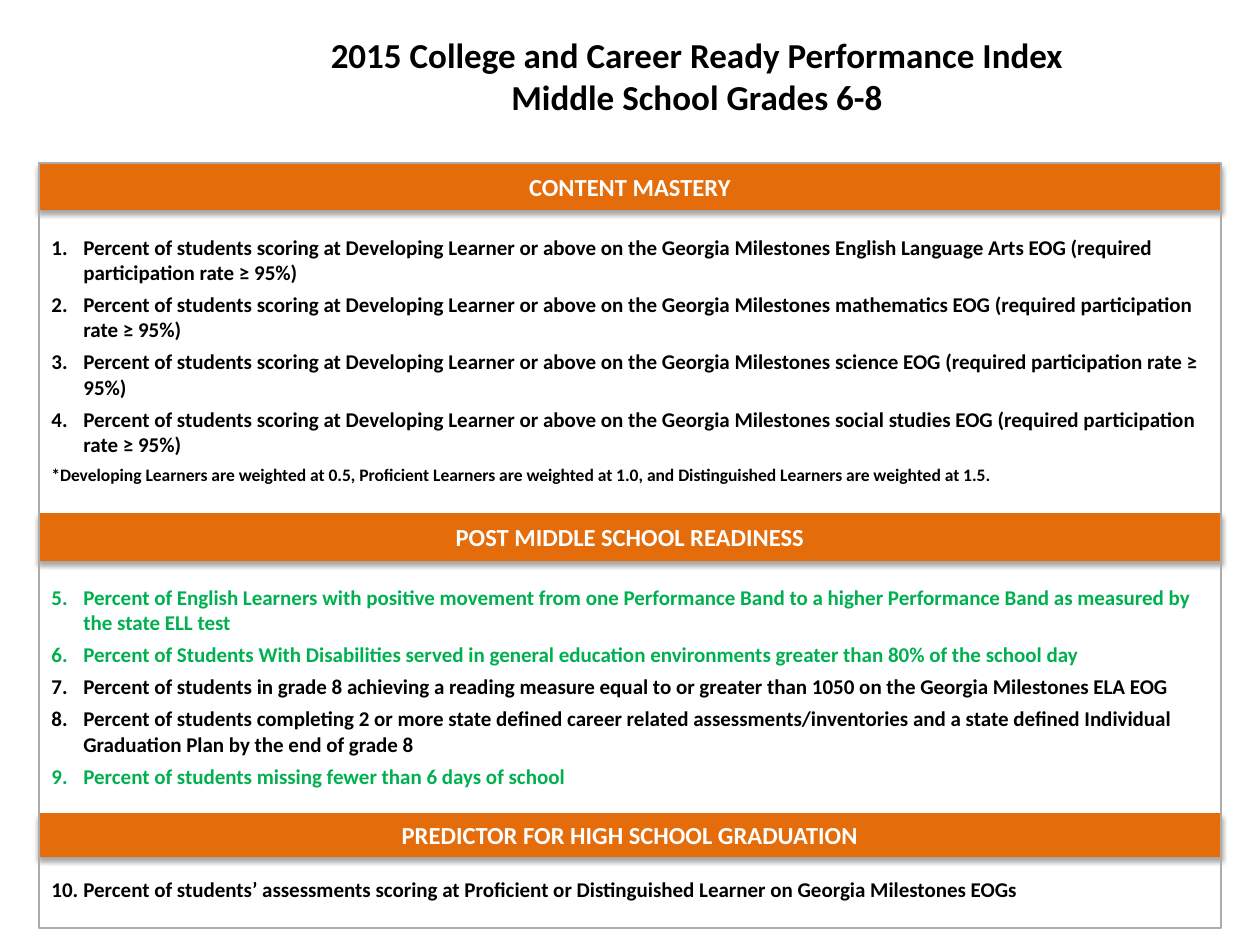
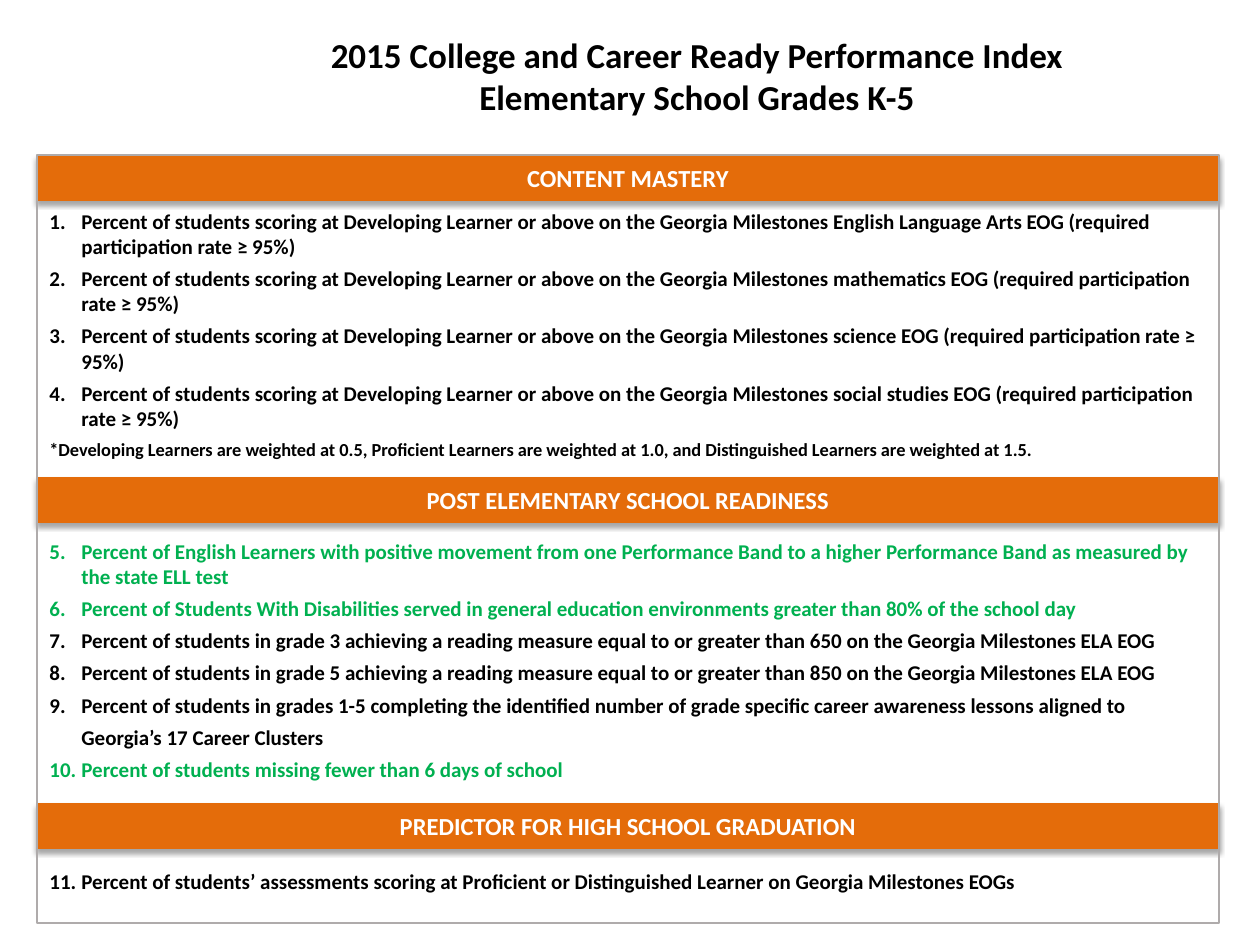
from pptx import Presentation
from pptx.dml.color import RGBColor
from pptx.enum.shapes import MSO_SHAPE
from pptx.enum.text import MSO_ANCHOR, PP_ALIGN
from pptx.oxml.ns import qn
from pptx.util import Pt
from lxml import etree

RECT = MSO_SHAPE.RECTANGLE
MIDDLE = MSO_ANCHOR.MIDDLE
CENTER = PP_ALIGN.CENTER

BLACK = RGBColor(0x00, 0x00, 0x00)
WHITE = RGBColor(0xFF, 0xFF, 0xFF)
ORANGE = RGBColor(0xE4, 0x6C, 0x0A)
GREEN = RGBColor(0x00, 0xB0, 0x50)
GRAY = RGBColor(0xAF, 0xAB, 0xAB)

FONT = "Calibri"
EMU_PER_PX = 914400 / 126
PAGE_SIZE = (1260, 945)
TITLE_BOX = (272, 19, 850, 113)
BAND_WIDTH = 1182
LIST_WIDTH = 1190
NUMBER_INDENT = 32

# Kinds of list entries
PLAIN, MARKED, CONTINUED, NOTE = range(4)

TITLE = "2015 College and Career Ready Performance Index"
MASTERY = [
    (PLAIN, "Percent of students scoring at Developing Learner or above on the "
            f"Georgia Milestones {subject} EOG (required participation rate ≥ 95%)")
    for subject in ("English Language Arts", "mathematics", "science", "social studies")
] + [
    (NOTE, "*Developing Learners are weighted at 0.5, Proficient Learners are weighted "
           "at 1.0, and Distinguished Learners are weighted at 1.5."),
]
SHARED_READINESS = [
    (MARKED, "Percent of English Learners with positive movement from one Performance Band "
             "to a higher Performance Band as measured by the state ELL test"),
    (MARKED, "Percent of Students With Disabilities served in general education "
             "environments greater than 80% of the school day"),
]
ATTENDANCE = (MARKED, "Percent of students missing fewer than 6 days of school")
PREDICTOR = [
    (PLAIN, "Percent of students’ assessments scoring at Proficient or Distinguished "
            "Learner on Georgia Milestones EOGs"),
]


def reading_goal(grade, score):
    return (PLAIN, f"Percent of students in grade {grade} achieving a reading measure equal to "
                   f"or greater than {score} on the Georgia Milestones ELA EOG")


# Sections: heading, band top, band height, list top, list height, entries
SCHOOLS = [
    {
        "level": "Middle School Grades 6-8",
        "left": 39, "frame_top": 163, "frame_height": 765, "note_size": 10,
        "sections": [
            ("CONTENT MASTERY", 164, 45, 228, 299, MASTERY),
            ("POST MIDDLE SCHOOL READINESS", 514, 46, 578, 219, SHARED_READINESS + [
                reading_goal(8, 1050),
                (PLAIN, "Percent of students completing 2 or more state defined career related "
                        "assessments/inventories and a state defined Individual Graduation "
                        "Plan by the end of grade 8"),
                ATTENDANCE,
            ]),
            ("PREDICTOR FOR HIGH SCHOOL GRADUATION", 814, 42, 870, 38, PREDICTOR),
        ],
    },
    {
        "level": "Elementary School Grades K-5",
        "left": 37, "frame_top": 155, "frame_height": 768, "note_size": 10.5,
        "sections": [
            ("CONTENT MASTERY", 156, 44, 202, 268, MASTERY),
            ("POST ELEMENTARY SCHOOL READINESS", 478, 44, 532, 258, SHARED_READINESS + [
                reading_goal(3, 650),
                reading_goal(5, 850),
                (PLAIN, "Percent of students in grades 1-5 completing the identified number of "
                        "grade specific career awareness lessons aligned to"),
                (CONTINUED, "Georgia’s 17 Career Clusters"),
                ATTENDANCE,
            ]),
            ("PREDICTOR FOR HIGH SCHOOL GRADUATION", 804, 44, 862, 38, PREDICTOR),
        ],
    },
]


def px(length):
    return round(length * EMU_PER_PX)


def place(box):
    return [px(length) for length in box]


def style(paragraph, size, color):
    font = paragraph.font
    font.name, font.size, font.bold = FONT, Pt(size), True
    font.color.rgb = color


def fill_centered(frame, text, size, color):
    frame.word_wrap = True
    frame.vertical_anchor = MIDDLE
    frame.text = text
    for paragraph in frame.paragraphs:
        paragraph.alignment = CENTER
        style(paragraph, size, color)


def add_title(slide, level):
    title = slide.shapes.add_textbox(*place(TITLE_BOX))
    fill_centered(title.text_frame, f"{TITLE}\n{level}", 20, BLACK)


def add_shadow(shape):
    """Add a soft shadow straight below the shape."""
    effects = shape._element.spPr.find(qn("a:effectLst"))
    shadow = etree.SubElement(effects, qn("a:outerShdw"), blurRad=str(Pt(3.1)),
                              dist=str(Pt(1.8)), dir="5400000", rotWithShape="0")
    color = etree.SubElement(shadow, qn("a:srgbClr"), val=str(BLACK))
    etree.SubElement(color, qn("a:alpha"), val="35000")


def add_band(slide, box, heading):
    band = slide.shapes.add_shape(RECT, *place(box))
    band.shadow.inherit = False
    add_shadow(band)
    band.fill.solid()
    band.fill.fore_color.rgb = ORANGE
    band.line.color.rgb = ORANGE
    band.line.width = Pt(0.75)
    fill_centered(band.text_frame, heading, 14, WHITE)


def add_frame(slide, box):
    frame = slide.shapes.add_shape(RECT, *place(box))
    frame.shadow.inherit = False
    frame.fill.background()
    frame.line.color.rgb = GRAY
    frame.line.width = Pt(1)


def add_list(slide, box, entries, number, note_size):
    """Add the entries, numbered from number, and return the next free number."""
    frame = slide.shapes.add_textbox(*place(box)).text_frame
    frame.word_wrap = True
    frame.text = "\n".join(text for _, text in entries)
    start = number
    for paragraph, (kind, _) in zip(frame.paragraphs, entries):
        paragraph.space_after = Pt(4)
        properties = paragraph._p.get_or_add_pPr()
        if kind != NOTE:
            properties.set("marL", str(px(NUMBER_INDENT)))
        if kind in (PLAIN, MARKED):
            properties.set("indent", str(-px(NUMBER_INDENT)))
            etree.SubElement(properties, qn("a:buFont"), typeface="+mj-lt")
            etree.SubElement(properties, qn("a:buAutoNum"), type="arabicPeriod",
                             startAt=str(start))
            number += 1
        else:
            start = number
        style(paragraph, note_size if kind == NOTE else 12,
              GREEN if kind == MARKED else BLACK)
    return number


def add_school(deck, school):
    slide = deck.slides.add_slide(deck.slide_layouts[6])
    left = school["left"]
    add_title(slide, school["level"])
    for heading, top, height, *_ in school["sections"]:
        add_band(slide, (left, top, BAND_WIDTH, height), heading)
    add_frame(slide, (left, school["frame_top"], BAND_WIDTH, school["frame_height"]))
    number = 1
    for *_, top, height, entries in school["sections"]:
        number = add_list(slide, (left, top, LIST_WIDTH, height), entries, number,
                          school["note_size"])


def main():
    deck = Presentation()
    deck.slide_width, deck.slide_height = place(PAGE_SIZE)
    for school in SCHOOLS:
        add_school(deck, school)
    deck.save("out.pptx")


if __name__ == "__main__":
    main()
